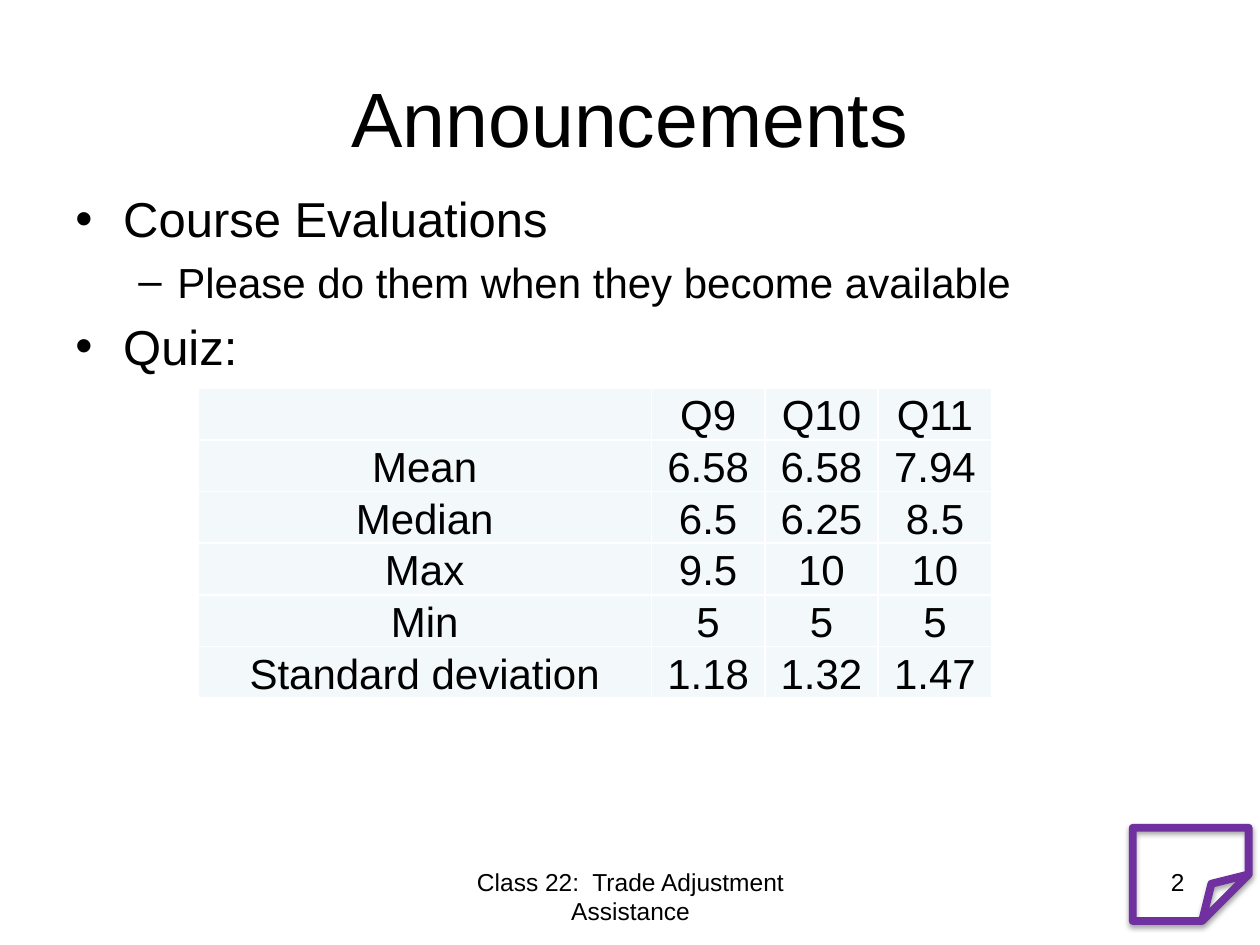
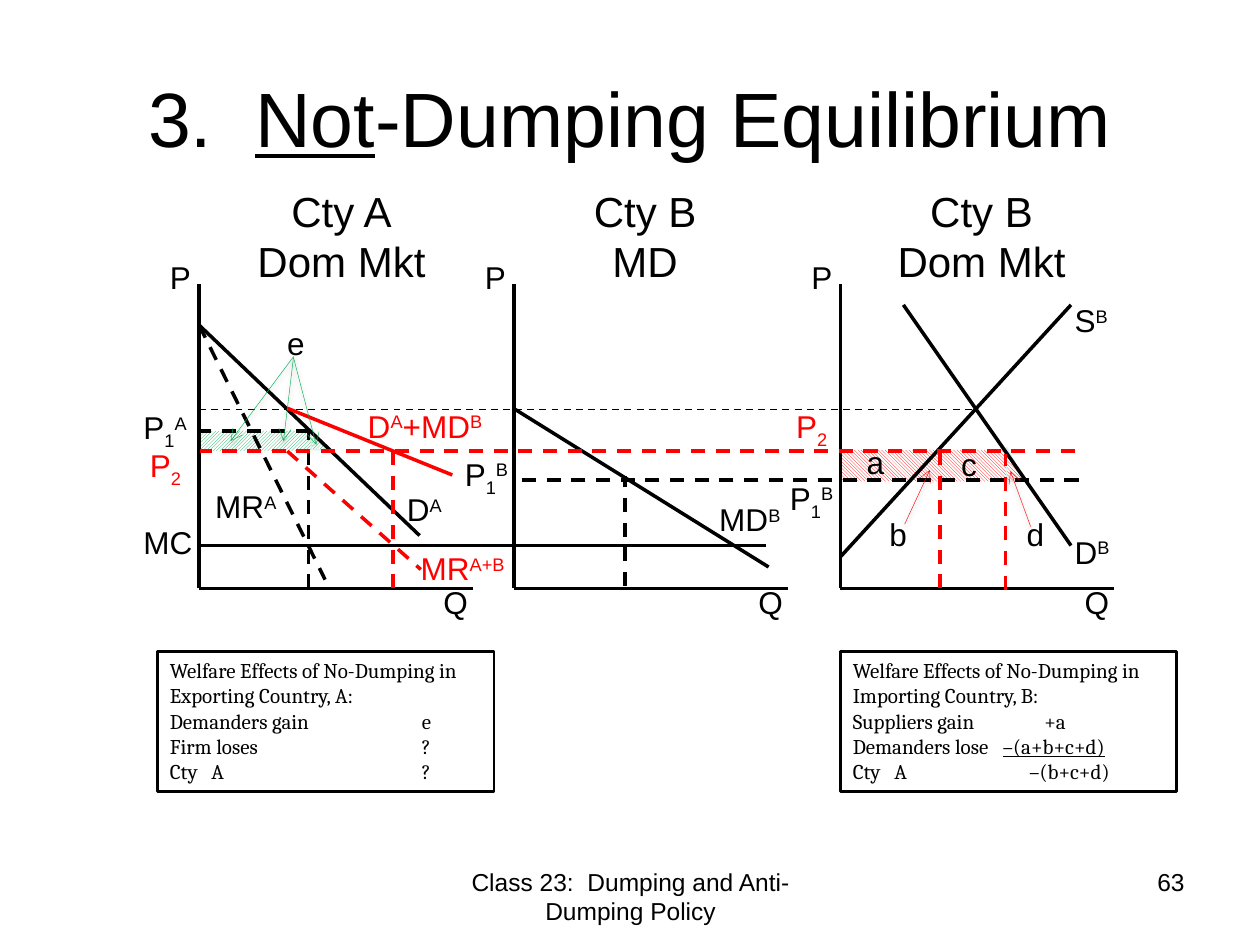
from lxml.etree import SubElement
from pptx import Presentation
from pptx.dml.color import RGBColor
from pptx.enum.dml import MSO_LINE, MSO_PATTERN
from pptx.enum.shapes import MSO_CONNECTOR, MSO_SHAPE
from pptx.enum.text import MSO_ANCHOR, PP_ALIGN
from pptx.oxml.ns import qn
from pptx.util import Inches, Pt

BLACK, WHITE, RED, GREEN = "000000", "FFFFFF", "FF0000", "00B050"
PURPLE, PALE, HATCH_EDGE = "7030A0", "F3F9FA", "E0F1F2"
LEFT, CENTER, RIGHT = PP_ALIGN.LEFT, PP_ALIGN.CENTER, PP_ALIGN.RIGHT


def rgb(value):
    return RGBColor.from_string(value)


def up(text):
    return text, {"base": 30}


def down(text):
    return text, {"base": -25}


def write(para, spans, size=18, color=BLACK, font="Arial", align=LEFT):
    para.alignment = align
    for item in [spans] if isinstance(spans, str) else spans:
        text, extra = (item, {}) if isinstance(item, str) else item
        span = para.add_run()
        span.text = text
        span.font.size = Pt(size)
        span.font.name = font
        span.font.color.rgb = rgb(color)
        if extra.get("underline"):
            span.font.underline = True
        if "base" in extra:
            span.font._element.set("baseline", str(extra["base"] * 1000))


def set_effects(shape, opacity=None, distance=1.8):
    effects = SubElement(shape._element.spPr, qn("a:effectLst"))
    if opacity:
        shadow = SubElement(effects, qn("a:outerShdw"), blurRad=str(Pt(3.1)),
                            dist=str(Pt(distance)), dir="5400000", rotWithShape="0")
        tint = SubElement(shadow, qn("a:srgbClr"), val=BLACK)
        SubElement(tint, qn("a:alpha"), val=str(opacity * 1000))


def set_tabs(para, stops):
    tabs = SubElement(para._p.get_or_add_pPr(), qn("a:tabLst"))
    for stop in stops:
        SubElement(tabs, qn("a:tab"), pos=str(Inches(stop)), algn="l")


class Lecture:
    def __init__(self):
        self.deck = Presentation()
        self.deck.slide_width, self.deck.slide_height = Inches(10), Inches(7.5)
        self.page = None

    def start_page(self, title, footer, number):
        self.page = self.deck.slides.add_slide(self.deck.slide_layouts[5])
        box = self.page.shapes.title
        box.left, box.top, box.width, box.height = map(Inches, (0.5, 0.3, 9, 1.25))
        box.text_frame.vertical_anchor = MSO_ANCHOR.MIDDLE
        write(box.text_frame.paragraphs[0], title, size=44, align=CENTER)
        self.text(3.42, 6.83, 3.17, 0.52, [footer], size=14, align=CENTER)
        self.text(7.17, 6.83, 2.33, 0.52, [number], size=14, align=RIGHT)

    def fill_frame(self, frame, lines, **style):
        frame.word_wrap = True
        for index, spans in enumerate(lines):
            para = frame.add_paragraph() if index else frame.paragraphs[0]
            write(para, spans, **style)

    def text(self, left, top, width, height, lines, **style):
        box = self.page.shapes.add_textbox(*map(Inches, (left, top, width, height)))
        self.fill_frame(box.text_frame, lines, **style)

    def label(self, left, top, *spans, width=0.75, color=BLACK):
        self.text(left, top, width, 0.4, [spans], color=color)

    def bullets(self, left, top, width, height, items):
        box = self.page.shapes.add_textbox(*map(Inches, (left, top, width, height)))
        frame = box.text_frame
        frame.word_wrap = True
        levels = [(28, "•", 0.38, 0.38), (24, "–", 0.81, 0.31)]
        for index, (level, words) in enumerate(items):
            size, mark, margin, hanging = levels[level]
            para = frame.add_paragraph() if index else frame.paragraphs[0]
            write(para, words, size=size)
            para.space_before = Pt(size * 0.2)
            props = para._p.get_or_add_pPr()
            props.set("marL", str(Inches(margin)))
            props.set("indent", str(Inches(-hanging)))
            SubElement(props, qn("a:buFont"), typeface="Arial")
            SubElement(props, qn("a:buChar"), char=mark)

    def table(self, left, top, widths, heights, rows):
        frame = self.page.shapes.add_table(
            len(rows), len(widths),
            *map(Inches, (left, top, sum(widths), sum(heights))))
        grid = frame.table
        grid.first_row = grid.horz_banding = False
        for column, width in zip(grid.columns, widths):
            column.width = Inches(width)
        for row, height, values in zip(grid.rows, heights, rows):
            row.height = Inches(height)
            for cell, value in zip(row.cells, values):
                self.table_cell(cell, value)

    def table_cell(self, cell, value):
        cell.vertical_anchor = MSO_ANCHOR.BOTTOM
        cell.margin_left = cell.margin_right = cell.margin_top = Inches(0.01)
        cell.margin_bottom = 0
        props = cell._tc.get_or_add_tcPr()
        for side in ("a:lnL", "a:lnR", "a:lnT", "a:lnB"):
            border = SubElement(props, qn(side), w=str(Pt(1)))
            SubElement(SubElement(border, qn("a:solidFill")), qn("a:srgbClr"), val=WHITE)
        cell.fill.solid()
        cell.fill.fore_color.rgb = rgb(PALE)
        if value:
            write(cell.text_frame.paragraphs[0], value, size=24, align=CENTER)

    def shape(self, kind, left, top, width, height, line=None, weight=1, hatch=None,
              opacity=None):
        shape = self.page.shapes.add_shape(kind, *map(Inches, (left, top, width, height)))
        if hatch:
            pattern, color = hatch
            shape.fill.patterned()
            shape.fill.pattern = pattern
            shape.fill.fore_color.rgb = rgb(color)
            shape.fill.back_color.rgb = rgb(WHITE)
        else:
            shape.fill.background()
        if line:
            shape.line.color.rgb = rgb(line)
            shape.line.width = Pt(weight)
        else:
            shape.line.fill.background()
        set_effects(shape, opacity)
        return shape

    def line(self, start, end, color=BLACK, weight=2, dashed=False, arrow=False):
        line = self.page.shapes.add_connector(
            MSO_CONNECTOR.STRAIGHT, *map(Inches, (*start, *end)))
        line.line.color.rgb = rgb(color)
        line.line.width = Pt(weight)
        if dashed:
            line.line.dash_style = MSO_LINE.DASH
        if arrow:
            SubElement(line.line._get_or_add_ln(), qn("a:tailEnd"), type="arrow")
        set_effects(line, 38 if arrow else None, 1.6)

    def panel(self, origin, heading_left, heading):
        self.line((origin, 4.67), (origin + 2.17, 4.67))
        self.line((origin, 4.67), (origin, 2.25))
        self.label(origin - 0.33, 2, "P")
        self.label(origin + 1.84, 4.58, "Q")
        self.text(heading_left, 1.42, 1.58, 0.91, heading, size=24, align=CENTER)

    def welfare_box(self, left, lines):
        box = self.shape(MSO_SHAPE.RECTANGLE, left, 5.17, 2.67, 1.11, BLACK, 1.5)
        frame = box.text_frame
        frame.vertical_anchor = MSO_ANCHOR.TOP
        self.fill_frame(frame, [spans for spans, stops in lines], size=12, font="Cambria")
        for para, (spans, stops) in zip(frame.paragraphs, lines):
            if stops:
                set_tabs(para, stops)


def announcements(lecture):
    lecture.start_page("Announcements", "Class 22:  Trade Adjustment Assistance", "2")
    lecture.bullets(0.5, 1.45, 9, 4.95, [
        (0, "Course Evaluations"),
        (1, "Please do them when they become available"),
        (0, "Quiz:"),
    ])
    lecture.table(1.57, 3.08, [3.6] + [0.9] * 3, [0.41] + [0.38] * 5, [
        ("", "Q9", "Q10", "Q11"),
        ("Mean", "6.58", "6.58", "7.94"),
        ("Median", "6.5", "6.25", "8.5"),
        ("Max", "9.5", "10", "10"),
        ("Min", "5", "5", "5"),
        ("Standard deviation", "1.18", "1.32", "1.47"),
    ])
    note = lecture.shape(MSO_SHAPE.FOLDED_CORNER, 8.99, 6.57, 0.92, 0.74,
                         PURPLE, 4.5, opacity=35)
    guides = next(note._element.spPr.iter(qn("a:avLst")))
    SubElement(guides, qn("a:gd"), name="adj", fmla="val 50000")


def not_dumping(lecture):
    lecture.start_page(["3.  ", ("Not", {"underline": True}), "-Dumping Equilibrium"],
                       "Class 23:  Dumping and Anti-Dumping Policy", "63")

    gain = MSO_PATTERN.DARK_UPWARD_DIAGONAL, GREEN
    loss = MSO_PATTERN.DARK_DOWNWARD_DIAGONAL, RED
    for hatch, block, corner in [
        (gain, (1.58, 3.42, 0.89, 0.16), (2.47, 3.41, 0.13, 0.16)),
        (loss, (6.67, 3.57, 1.33, 0.25), (7.99, 3.55, 0.14, 0.27)),
    ]:
        lecture.shape(MSO_SHAPE.RECTANGLE, *block, hatch=hatch)
        lecture.shape(MSO_SHAPE.RIGHT_TRIANGLE, *corner, HATCH_EDGE, 0.75, hatch=hatch)

    lecture.panel(1.58, 1.92, ["Cty A", "Dom Mkt"])
    lecture.panel(4.08, 4.33, ["Cty B", "MD"])
    lecture.panel(6.67, 7, ["Cty B", "Dom Mkt"])

    for start, end in [
        ((1.58, 2.58), (3.33, 4.25)),
        ((7.17, 2.42), (8.5, 4.33)),
        ((6.67, 4.42), (8.5, 2.42)),
        ((4.09, 3.25), (6.1, 4.5)),
        ((1.58, 4.33), (6.08, 4.33)),
    ]:
        lecture.line(start, end)
    lecture.line((1.58, 3.25), (7.75, 3.25), weight=1, dashed=True)
    for start, end in [
        ((1.58, 2.58), (2.58, 4.6)),
        ((2.45, 4.67), (2.45, 3.42)),
        ((2.46, 3.42), (1.58, 3.42)),
        ((4.96, 4.65), (4.96, 3.78)),
        ((8.56, 3.81), (4.08, 3.81)),
    ]:
        lecture.line(start, end, dashed=True)
    lecture.line((2.28, 3.24), (3.59, 3.77), RED)
    for start, end in [
        ((3.12, 4.67), (3.12, 3.58)),
        ((8.53, 3.58), (1.59, 3.58)),
        ((2.28, 3.58), (3.34, 4.52)),
        ((7.46, 4.67), (7.46, 3.58)),
        ((7.98, 4.68), (7.98, 3.6)),
    ]:
        lecture.line(start, end, RED, dashed=True)

    for left, top, *spans in [
        (1.04, 3.19, "P", down("1"), up("A")),
        (1.04, 4.1, "MC"),
        (1.61, 3.82, "MR", up("A")),
        (3.59, 3.56, "P", down("1"), up("B")),
        (8.43, 2.34, "S", up("B")),
        (5.61, 3.92, "MD", up("B")),
        (8.43, 4.18, "D", up("B")),
        (6.17, 3.75, "P", down("1"), up("B")),
        (3.13, 3.84, "D", up("A")),
    ]:
        lecture.label(left, top, *spans)
    lecture.label(2.82, 3.18, "D", up("A"), "+MD", up("B"), width=1.35, color=RED)
    lecture.label(3.24, 4.31, "MR", up("A+B"), width=1.17, color=RED)
    for left, top in [(1.09, 3.49), (6.22, 3.18)]:
        lecture.label(left, top, "P", down("2"), color=RED)
    for left, top, area in [(6.78, 3.47, "a"), (7.53, 3.48, "c"), (8.05, 4.04, "d"),
                            (6.96, 4.04, "b"), (2.18, 2.52, "e")]:
        lecture.label(left, top, area, width=0.33)

    for start, end, color in [
        ((7.18, 4.16), (7.38, 3.73), RED),
        ((8.18, 4.18), (8.02, 3.74), RED),
        ((2.33, 2.83), (1.83, 3.5), GREEN),
        ((2.33, 2.83), (2.25, 3.5), GREEN),
        ((2.33, 2.84), (2.51, 3.53), GREEN),
    ]:
        lecture.line(start, end, color, 0.25, arrow=True)

    lecture.welfare_box(1.25, [
        ("Welfare Effects of No-Dumping in Exporting Country, A:", []),
        ("Demanders gain\te", [2]),
        ("Firm loses\t?", [2]),
        ("Cty   A\t?", [2]),
    ])
    lecture.welfare_box(6.67, [
        ("Welfare Effects of No-Dumping in Importing Country, B:", []),
        ("Suppliers gain\t+a", [1.52]),
        (["Demanders lose\t", ("–(a+b+c+d)\t", {"underline": True})], [1.19, 2.07]),
        ("Cty   A\t–(b+c+d)", [1.4]),
    ])


def main():
    lecture = Lecture()
    announcements(lecture)
    not_dumping(lecture)
    lecture.deck.save("out.pptx")


if __name__ == "__main__":
    main()
